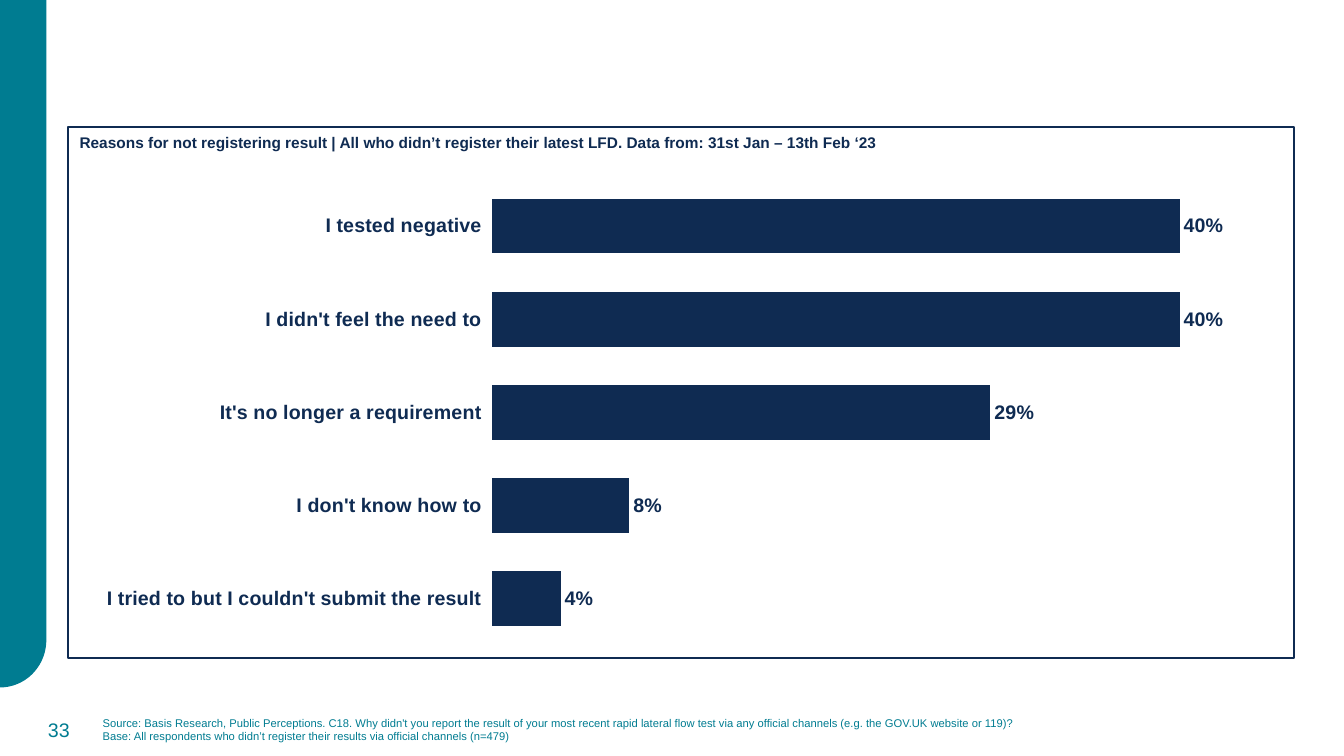
"""Build the slide on reasons for not registering a test result."""
from math import cos, pi, sin

from lxml.etree import SubElement
from pptx import Presentation
from pptx.chart.data import CategoryChartData
from pptx.dml.color import RGBColor
from pptx.enum.chart import XL_CHART_TYPE, XL_LABEL_POSITION, XL_TICK_LABEL_POSITION, XL_TICK_MARK
from pptx.enum.shapes import MSO_SHAPE
from pptx.enum.text import MSO_ANCHOR, PP_ALIGN
from pptx.oxml.ns import qn
from pptx.util import Inches, Pt

THEME = {
    "font": "Arial",
    "navy": RGBColor(0x0F, 0x2B, 0x52),
    "teal": RGBColor(0x00, 0x7C, 0x91),
    "white": RGBColor(0xFF, 0xFF, 0xFF),
    "title": Pt(11),
    "label": Pt(14),
    "note": Pt(8),
}

prs = Presentation()
prs.slide_width, prs.slide_height = Inches(13.33), Inches(7.5)
W, H = prs.slide_width, prs.slide_height
s = prs.slides.add_slide(prs.slide_layouts[6])


def place(left, top, width, height):
    """Turn percentages of the slide into lengths."""
    return [int(share * side / 100) for share, side in zip((left, top, width, height), (W, H, W, H))]


def style(font, size, color, bold=False):
    """Set the theme font with a size, colour and weight."""
    font.name, font.size, font.bold = THEME["font"], size, bold
    font.color.rgb = color


band_w, corner_top, band_h = Inches(0.46), Inches(6.35), Inches(6.82)
steps = 30
curve = [
    (int(band_w * cos(i * pi / 2 / steps)), int(corner_top + (band_h - corner_top) * sin(i * pi / 2 / steps)))
    for i in range(steps + 1)
]
fb = s.shapes.build_freeform(0, 0)
fb.add_line_segments([(band_w, 0), *curve], close=True)
band = fb.convert_to_shape()
band.shadow.inherit = False
band.fill.solid()
band.fill.fore_color.rgb = THEME["teal"]
band.line.fill.background()

frame = s.shapes.add_shape(MSO_SHAPE.RECTANGLE, *place(5.03, 16.8, 91.28, 70.27))
frame.shadow.inherit = False
frame.fill.solid()
frame.fill.fore_color.rgb = THEME["white"]
frame.line.color.rgb = THEME["navy"]
frame.line.width = Pt(1.5)

data = CategoryChartData(number_format="0%")
data.categories = [
    "I tested negative",
    "I didn't feel the need to",
    "It's no longer a requirement",
    "I don't know how to",
    "I tried to but I couldn't submit the result",
]
data.add_series("Series 1", (0.4, 0.4, 0.29, 0.08, 0.04))
chart = s.shapes.add_chart(XL_CHART_TYPE.BAR_CLUSTERED, *place(5.18, 23.73, 90.53, 63.87), data).chart
chart.has_legend = False
chart.has_title = False
style(chart.font, THEME["label"], THEME["navy"], True)

cat = chart.category_axis
cat.reverse_order = True
cat.major_tick_mark = XL_TICK_MARK.NONE
cat.tick_label_position = XL_TICK_LABEL_POSITION.LOW
cat.format.line.fill.background()
style(cat.tick_labels.font, THEME["label"], THEME["navy"], True)

val = chart.value_axis
val.visible = False
val.has_major_gridlines = False
val.minimum_scale, val.maximum_scale = 0, 0.45

plot = chart.plots[0]
plot.gap_width = 70
plot.vary_by_categories = False
bars = plot.series[0].format.fill
bars.solid()
bars.fore_color.rgb = THEME["navy"]
plot.has_data_labels = True
labels = plot.data_labels
labels.show_value = True
labels.number_format, labels.number_format_is_linked = "0%", False
labels.position = XL_LABEL_POSITION.OUTSIDE_END
style(labels.font, THEME["label"], THEME["navy"], True)

area = chart.element.find(".//" + qn("c:plotArea"))
for old in area.findall(qn("c:layout")):
    area.remove(old)
layout = SubElement(area, qn("c:layout"))
area.insert(0, layout)
manual = SubElement(layout, qn("c:manualLayout"))
for tag, value in (
    ("layoutTarget", "inner"), ("xMode", "edge"), ("yMode", "edge"),
    ("x", 0.347), ("y", 0), ("w", 0.636), ("h", 0.965),
):
    SubElement(manual, qn("c:" + tag)).set("val", str(value))

title = "Reasons for not registering result | All who didn’t register their latest LFD. Data from: 31st Jan – 13th Feb ‘23"
source = [
    "Source: Basis Research, Public Perceptions. C18. Why didn't you report the result of your most recent "
    "rapid lateral flow test via any official channels (e.g. the GOV.UK website or 119)?",
    "Base: All respondents who didn’t register their results via official channels (n=479)",
]
texts = [
    ((5.18, 16.93, 64.95, 3.87), [title], "title", "navy", True, PP_ALIGN.LEFT, MSO_ANCHOR.TOP),
    ((6.9, 93.87, 82.05, 5.33), source, "note", "teal", False, PP_ALIGN.LEFT, MSO_ANCHOR.MIDDLE),
    ((1.05, 93.87, 4.88, 5.33), ["33"], "label", "teal", False, PP_ALIGN.RIGHT, MSO_ANCHOR.MIDDLE),
]
for box, lines, size, color, bold, align, anchor in texts:
    tf = s.shapes.add_textbox(*place(*box)).text_frame
    tf.word_wrap = True
    tf.vertical_anchor = anchor
    tf.text = "\n".join(lines)
    for p in tf.paragraphs:
        p.alignment = align
        style(p.font, THEME[size], THEME[color], bold)

prs.save("out.pptx")
